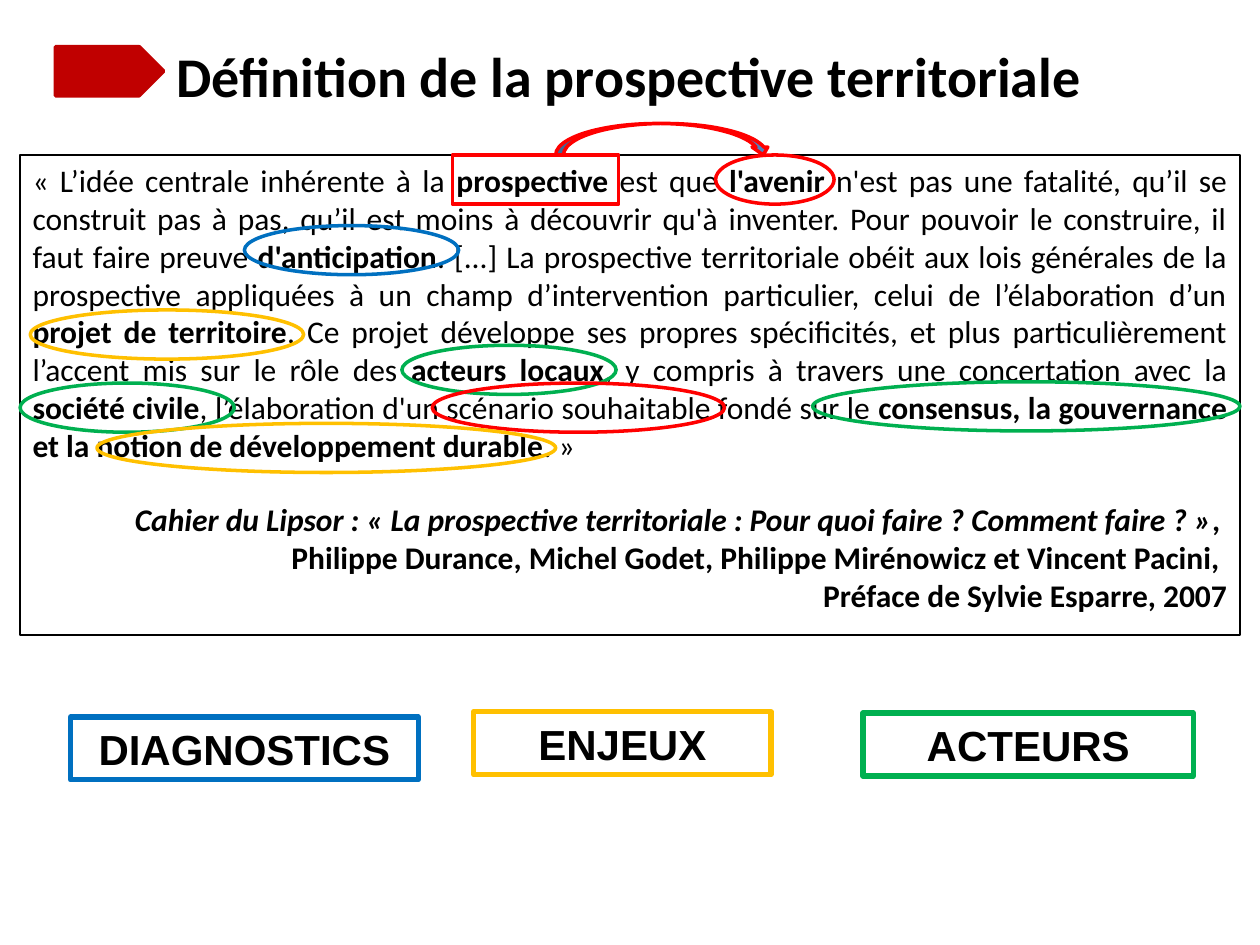
import dataclasses
from typing import Optional

import pptx
import pptx.util
from pptx.dml.color import RGBColor
from pptx.enum.shapes import MSO_SHAPE
from pptx.enum.text import MSO_ANCHOR, MSO_AUTO_SIZE, PP_ALIGN
from pptx.util import Inches

BLACK = RGBColor(0x00, 0x00, 0x00)
RED = RGBColor(0xFF, 0x00, 0x00)
DARK_RED = RGBColor(0xC0, 0x00, 0x00)
BLUE = RGBColor(0x00, 0x70, 0xC0)
ARROW_BLUE = RGBColor(0x4F, 0x81, 0xBD)
GREEN = RGBColor(0x00, 0xB0, 0x50)
ORANGE = RGBColor(0xFF, 0xC0, 0x00)

MARK_HEIGHT = 0.39
LABEL_HEIGHT = 0.5

TITLE = "Définition de la prospective territoriale"
QUOTE = (
    "« L’idée centrale inhérente à la *prospective* est que *l'avenir* n'est pas une fatalité, "
    "qu’il se construit pas à pas, qu’il est moins à découvrir qu'à inventer. Pour pouvoir le "
    "construire, il faut faire preuve *d'anticipation*. [...] La prospective territoriale obéit "
    "aux lois générales de la prospective appliquées à un champ d’intervention particulier, celui "
    "de l’élaboration d’un *projet de territoire*. Ce projet développe ses propres spécificités, "
    "et plus particulièrement l’accent mis sur le rôle des *acteurs locaux*, y compris à travers "
    "une concertation avec la *société civile*, l’élaboration d'un scénario souhaitable fondé sur "
    "le *consensus, la gouvernance et la notion de développement durable*. »"
)
WORK = "Cahier du Lipsor : « La prospective territoriale : Pour quoi faire ? Comment faire ? »"
AUTHORS = "Philippe Durance, Michel Godet, Philippe Mirénowicz et Vincent Pacini, "
PREFACE = "Préface de Sylvie Esparre, 2007"


@dataclasses.dataclass
class Outline:
    left: float
    top: float
    width: float
    color: RGBColor
    height: float = MARK_HEIGHT
    kind: MSO_SHAPE = MSO_SHAPE.OVAL
    weight: float = 2
    fill: Optional[RGBColor] = None


@dataclasses.dataclass
class Label:
    text: str
    left: float
    top: float
    width: float
    color: RGBColor


QUOTE_BOX = Outline(0.16, 1.23, 9.68, BLACK, 3.81, MSO_SHAPE.RECTANGLE, 1)

MARKS = [
    Outline(0.44, 0.37, 0.86, DARK_RED, kind=MSO_SHAPE.PENTAGON, fill=DARK_RED),
    Outline(5.68, 1.23, 0.94, RED),
    Outline(1.94, 1.79, 1.7, BLUE),
    Outline(0.24, 2.46, 2.17, ORANGE),
    Outline(3.19, 2.74, 1.7, GREEN),
    Outline(3.59, 1.23, 1.32, RED, kind=MSO_SHAPE.RECTANGLE),
    Outline(4.41, 0.98, 1.71, RED, 0.25, MSO_SHAPE.CURVED_DOWN_ARROW, fill=ARROW_BLUE),
    Outline(0.16, 3.04, 1.7, GREEN),
    Outline(3.43, 3.04, 2.32, RED),
    Outline(6.45, 3.03, 3.39, GREEN),
    Outline(0.77, 3.36, 3.64, ORANGE),
]

LABELS = [
    Label("DIAGNOSTICS", 0.56, 5.69, 2.76, BLUE),
    Label("ENJEUX", 3.76, 5.65, 2.36, ORANGE),
    Label("ACTEURS", 6.85, 5.66, 2.62, GREEN),
]


def format_run(r, size: float, bold: bool, italic: bool = False, name: str = "Calibri") -> None:
    r.font.name = name
    r.font.size = pptx.util.Pt(size)
    r.font.bold = bold
    r.font.italic = italic
    r.font.color.rgb = BLACK


def add_text(p, text: str, bold: bool, italic: bool = False) -> None:
    r = p.add_run()
    r.text = text
    format_run(r, 18, bold, italic)


def draw_outline(s, o: Outline):
    sp = s.shapes.add_shape(
        o.kind, Inches(o.left), Inches(o.top), Inches(o.width), Inches(o.height)
    )
    sp.shadow.inherit = False
    if o.fill is None:
        sp.fill.background()
    else:
        sp.fill.solid()
        sp.fill.fore_color.rgb = o.fill
    sp.line.color.rgb = o.color
    sp.line.width = pptx.util.Pt(o.weight)
    return sp


def draw_title(s) -> None:
    sp = s.shapes.title
    sp.left, sp.top = Inches(1.3), Inches(0.28)
    sp.width, sp.height = Inches(7.95), Inches(0.63)
    tf = sp.text_frame
    tf.text = TITLE
    tf.auto_size = MSO_AUTO_SIZE.NONE
    tf.vertical_anchor = MSO_ANCHOR.TOP
    p = tf.paragraphs[0]
    p.alignment = PP_ALIGN.LEFT
    format_run(p.runs[0], 32, True)


def draw_quote(s) -> None:
    tf = draw_outline(s, QUOTE_BOX).text_frame
    tf.word_wrap = True
    tf.vertical_anchor = MSO_ANCHOR.TOP
    p = tf.paragraphs[0]
    p.alignment = PP_ALIGN.JUSTIFY
    for i, text in enumerate(QUOTE.split("*")):
        add_text(p, text, i % 2 == 1)

    p = tf.add_paragraph()
    p.alignment = PP_ALIGN.RIGHT
    p.space_before = pptx.util.Pt(21)
    add_text(p, WORK, True, True)
    add_text(p, ", ", True)
    for text in (AUTHORS, PREFACE):
        p = tf.add_paragraph()
        p.alignment = PP_ALIGN.RIGHT
        add_text(p, text, True)


def draw_label(s, label: Label) -> None:
    box = Outline(
        label.left, label.top, label.width, label.color, LABEL_HEIGHT, MSO_SHAPE.RECTANGLE, 3
    )
    tf = draw_outline(s, box).text_frame
    tf.text = label.text
    tf.word_wrap = True
    p = tf.paragraphs[0]
    p.alignment = PP_ALIGN.CENTER
    format_run(p.runs[0], 24, True, name="Arial")


def main() -> None:
    prs = pptx.Presentation()
    prs.slide_width, prs.slide_height = Inches(10), Inches(7.5)
    s = prs.slides.add_slide(prs.slide_layouts[5])
    draw_title(s)
    draw_quote(s)
    for mark in MARKS:
        draw_outline(s, mark)
    for label in LABELS:
        draw_label(s, label)
    prs.save("out.pptx")


if __name__ == "__main__":
    main()
